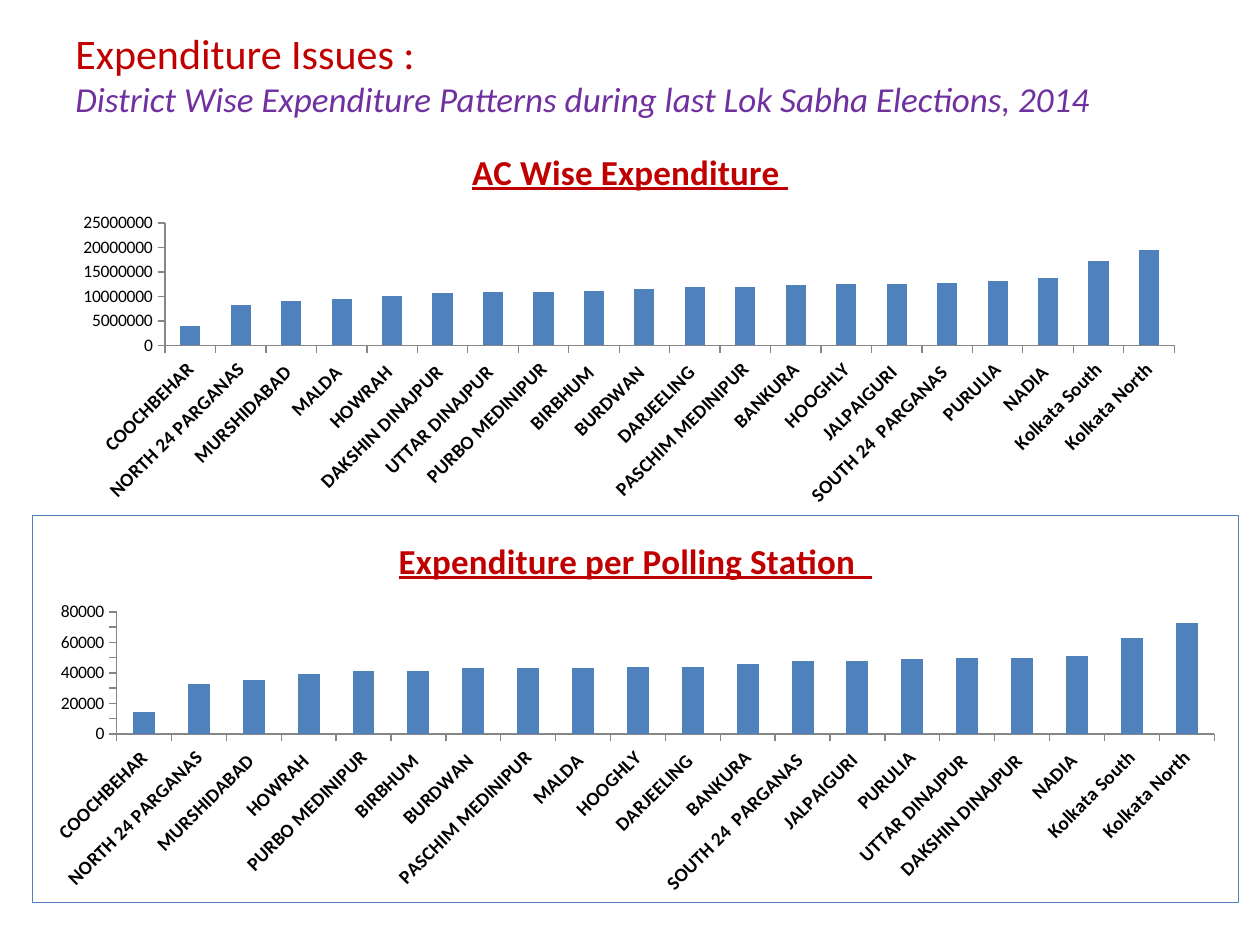
from dataclasses import dataclass
from typing import Any, Optional

import lxml.etree
import pptx
import pptx.chart.data
import pptx.dml.color
import pptx.enum.chart
import pptx.enum.text
import pptx.oxml
import pptx.oxml.ns
import pptx.util

Pt = pptx.util.Pt
qn = pptx.oxml.ns.qn
RED, PURPLE, BLUE, BLACK, GREY = "C00000", "7030A0", "4F81BD", "000000", "868686"
FONT = "Calibri"


@dataclass
class BarChart:
    title: str
    series: str
    box: tuple[float, float, float, float]  # left, top, width, height in points
    plot: tuple[float, float, float, float]  # x, y, w, h as shares of the chart
    top: int
    step: int
    unit: int
    rows: list[tuple[str, float]]
    border: Optional[str] = None


CHARTS = [
    BarChart(
        "AC Wise Expenditure ", "AC Wise Expenditure ",
        (36, 72, 648, 222), (0.09, 0.25, 0.89, 0.315), 25_000_000, 5_000_000, 100_000,
        [("COOCHBEHAR", 40), ("NORTH 24 PARGANAS", 82), ("MURSHIDABAD ", 90),
         ("MALDA ", 95), ("HOWRAH ", 101), ("DAKSHIN DINAJPUR ", 107),
         ("UTTAR DINAJPUR ", 109), ("PURBO MEDINIPUR", 109), ("BIRBHUM ", 111),
         ("BURDWAN ", 115), ("DARJEELING ", 119), ("PASCHIM MEDINIPUR", 120),
         ("BANKURA", 124), ("HOOGHLY", 125), ("JALPAIGURI ", 126),
         ("SOUTH 24  PARGANAS ", 128), ("PURULIA", 132), ("NADIA ", 137),
         ("Kolkata South", 173), ("Kolkata North", 194)],
    ),
    BarChart(
        "Expenditure per Polling Station  ", "Series 1",
        (18, 294, 690, 222), (0.07, 0.25, 0.91, 0.315), 80_000, 10_000, 1000,
        [("COOCHBEHAR", 14), ("NORTH 24 PARGANAS", 33), ("MURSHIDABAD ", 35),
         ("HOWRAH ", 39), ("PURBO MEDINIPUR", 41), ("BIRBHUM ", 41),
         ("BURDWAN ", 43), ("PASCHIM MEDINIPUR", 43), ("MALDA ", 43),
         ("HOOGHLY", 44), ("DARJEELING ", 44), ("BANKURA", 46),
         ("SOUTH 24  PARGANAS ", 48), ("JALPAIGURI ", 48), ("PURULIA", 49),
         ("UTTAR DINAJPUR ", 50), ("DAKSHIN DINAJPUR ", 50), ("NADIA ", 51),
         ("Kolkata South", 63), ("Kolkata North", 73)],
        border=BLUE,
    ),
]


def rgb(value: str) -> pptx.dml.color.RGBColor:
    return pptx.dml.color.RGBColor.from_string(value)


def set_all(obj: Any, values: dict[str, Any]) -> None:
    for name, value in values.items():
        setattr(obj, name, value)


def set_font(font: Any, size: float, color: str, **extra: bool) -> None:
    set_all(font, {"name": FONT, "size": Pt(size), **extra})
    font.color.rgb = rgb(color)


def set_frame(chart: Any, border: Optional[str]) -> None:
    """Give the chart area its outline, or none."""
    line = f'<a:solidFill><a:srgbClr val="{border}"/></a:solidFill>' if border else "<a:noFill/>"
    sp_pr = pptx.oxml.parse_xml(
        f'<c:spPr {pptx.oxml.ns.nsdecls("c", "a")}><a:noFill/>'
        f'<a:ln w="{Pt(0.75)}">{line}</a:ln></c:spPr>')
    chart._chartSpace.find(qn("c:txPr")).addprevious(sp_pr)


def set_plot_area(chart: Any, plot: tuple[float, float, float, float]) -> None:
    area = chart._chartSpace.find(".//" + qn("c:plotArea"))
    for old in area.findall(qn("c:layout")):
        area.remove(old)
    layout = lxml.etree.Element(qn("c:layout"))
    manual = lxml.etree.SubElement(layout, qn("c:manualLayout"))
    values = {"layoutTarget": "inner", "xMode": "edge", "yMode": "edge",
              **dict(zip("xywh", plot))}
    for name, value in values.items():
        lxml.etree.SubElement(manual, qn(f"c:{name}"), val=str(value))
    area.insert(0, layout)


def add_bar_chart(s: Any, spec_: BarChart) -> None:
    data = pptx.chart.data.CategoryChartData(number_format="0")
    data.categories = [name for name, _ in spec_.rows]
    data.add_series(spec_.series, [value * spec_.unit for _, value in spec_.rows])
    chart = s.shapes.add_chart(
        pptx.enum.chart.XL_CHART_TYPE.COLUMN_CLUSTERED, *map(Pt, spec_.box), data).chart
    chart.has_legend = False
    set_font(chart.font, 10, BLACK)

    # Title
    chart.has_title = True
    chart.chart_title.include_in_layout = False
    r = chart.chart_title.text_frame.paragraphs[0].add_run()
    r.text = spec_.title
    set_font(r.font, 20, RED, bold=True, underline=True)

    # Columns
    set_all(chart.plots[0], {"gap_width": 150, "vary_by_categories": False})
    fill = chart.plots[0].series[0].format.fill
    fill.solid()
    fill.fore_color.rgb = rgb(BLUE)

    # Axes
    cat, val = chart.category_axis, chart.value_axis
    tick = pptx.enum.chart.XL_TICK_MARK
    for axis in (cat, val):
        set_all(axis, {"has_major_gridlines": False, "major_tick_mark": tick.OUTSIDE,
                       "minor_tick_mark": tick.NONE})
        axis.format.line.color.rgb = rgb(GREY)
        axis.format.line.width = Pt(0.75)
    set_all(val, {"minimum_scale": 0, "maximum_scale": spec_.top, "major_unit": spec_.step})
    set_all(val.tick_labels, {"number_format": "0", "number_format_is_linked": False})
    set_font(cat.tick_labels.font, 11, BLACK, bold=True)
    body = cat._element.find(qn("c:txPr")).find(qn("a:bodyPr"))
    body.set("rot", str(-45 * 60000))
    body.set("vert", "horz")

    set_plot_area(chart, spec_.plot)
    set_frame(chart, spec_.border)


def add_heading(s: Any) -> None:
    sp = s.shapes.add_textbox(Pt(36), Pt(18), Pt(648), Pt(48))
    tf = sp.text_frame
    set_all(tf, {"word_wrap": True, "margin_top": 0, "margin_bottom": 0,
                 "vertical_anchor": pptx.enum.text.MSO_ANCHOR.MIDDLE})
    lines = [
        ("Expenditure Issues :", 24, RED, False),
        ("District Wise Expenditure Patterns during last Lok Sabha Elections, 2014",
         20, PURPLE, True),
    ]
    for i, (text, size, color, italic) in enumerate(lines):
        p = tf.add_paragraph() if i else tf.paragraphs[0]
        r = p.add_run()
        r.text = text
        set_font(r.font, size, color, italic=italic)


def main() -> None:
    prs = pptx.Presentation()
    set_all(prs, {"slide_width": Pt(720), "slide_height": Pt(540)})
    s = prs.slides.add_slide(prs.slide_layouts[6])
    add_heading(s)
    for chart in CHARTS:
        add_bar_chart(s, chart)
    prs.save("out.pptx")


if __name__ == "__main__":
    main()
